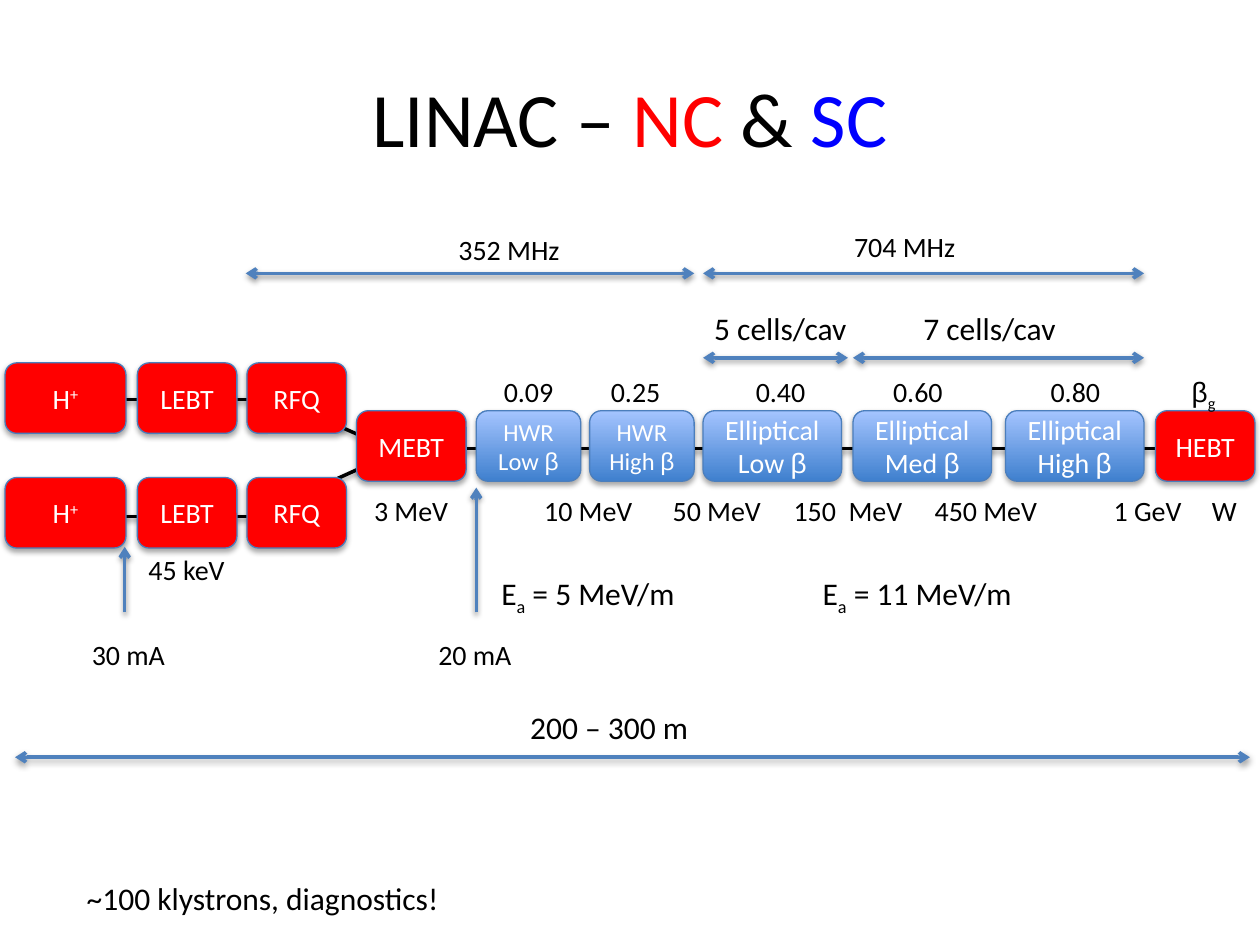
from collections import namedtuple
from lxml import etree
from pptx import Presentation
from pptx.dml.color import RGBColor
from pptx.enum.shapes import MSO_CONNECTOR, MSO_SHAPE
from pptx.enum.text import MSO_ANCHOR, MSO_AUTO_SIZE, PP_ALIGN
from pptx.oxml.ns import qn
from pptx.util import Inches, Pt

BLACK, WHITE, RED, BLUE = "000000", "FFFFFF", "FF0000", "0000FF"
ARROW, EDGE = "4F81BD", "4B7EBC"
GRADIENT = ["3F80CE", "A4C4FF"]
LABEL_HEIGHT = {16: 0.37, 18: 0.4}

Box = namedtuple("Box", "left top width height")
Span = namedtuple("Span", "text font color baseline", defaults=(None, None, None))
BETA = Span("β", "Arial")


def color(value):
    return RGBColor.from_string(value)


def place(box, x, y, width, height):
    return [Inches(n) for n in (box.left + x, box.top + y, width, height)]


def add_shadow(item, opacity, distance):
    properties = item._element.spPr
    effects = etree.SubElement(properties, qn("a:effectLst"))
    shadow = etree.SubElement(effects, qn("a:outerShdw"), blurRad="40000",
                              dist=str(distance), dir="5400000", rotWithShape="0")
    tint = etree.SubElement(shadow, qn("a:srgbClr"), val=BLACK)
    etree.SubElement(tint, qn("a:alpha"), val=str(opacity * 1000))


def write(frame, lines, size, ink, align=PP_ALIGN.LEFT):
    for index, line in enumerate(lines):
        para = frame.add_paragraph() if index else frame.paragraphs[0]
        para.alignment = align
        para.font.size = Pt(size)
        para.font.name = "Calibri"
        para.font.color.rgb = color(ink)
        for part in line:
            span = para.add_run()
            span.text = part.text
            if part.font:
                span.font.name = part.font
            if part.color:
                span.font.color.rgb = color(part.color)
            if part.baseline:
                span._r.get_or_add_rPr().set("baseline", str(part.baseline * 1000))


def add_label(page, box, x, y, width, text, size=16):
    spans = [Span(text)] if isinstance(text, str) else text
    label = page.shapes.add_textbox(*place(box, x, y, width, LABEL_HEIGHT[size]))
    label.text_frame.word_wrap = False
    label.text_frame.auto_size = MSO_AUTO_SIZE.SHAPE_TO_FIT_TEXT
    write(label.text_frame, [spans], size, BLACK)


def add_line(page, box, start, end, ink=ARROW, arrows=("headEnd", "tailEnd")):
    x1, y1, x2, y2 = place(box, *start, 0, 0)[:2] + place(box, *end, 0, 0)[:2]
    line = page.shapes.add_connector(MSO_CONNECTOR.STRAIGHT, x1, y1, x2, y2)
    line.line.color.rgb = color(ink)
    line.line.width = Pt(2)
    for arrow in arrows:
        etree.SubElement(line.line._get_or_add_ln(), qn("a:" + arrow), type="arrow")
    add_shadow(line, 38, 20000)


def add_section(page, box, x, width, lines, size=16, cold=False):
    section = page.shapes.add_shape(MSO_SHAPE.ROUNDED_RECTANGLE,
                                    *place(box, x, 0, width, box.height))
    if cold:
        section.fill.gradient()
        section.fill.gradient_angle = 90
        for stop, position, tint in zip(section.fill.gradient_stops, (0, 1), GRADIENT):
            stop.position = position
            stop.color.rgb = color(tint)
    else:
        section.fill.solid()
        section.fill.fore_color.rgb = color(RED)
    section.line.color.rgb = color(EDGE)
    section.line.width = Pt(0.75)
    add_shadow(section, 35, 23000)
    section.text_frame.word_wrap = True
    section.text_frame.vertical_anchor = MSO_ANCHOR.MIDDLE
    write(section.text_frame, lines, size, WHITE, PP_ALIGN.CENTER)


def add_title(page, box):
    title = page.shapes.add_textbox(*place(box, 0, 0, box.width, box.height))
    title.text_frame.word_wrap = True
    title.text_frame.vertical_anchor = MSO_ANCHOR.MIDDLE
    spans = [Span("LINAC – "), Span("NC", color=RED), Span(" & "), Span("SC", color=BLUE)]
    write(title.text_frame, [spans], 44, BLACK, PP_ALIGN.CENTER)


def add_beam_lines(page, box):
    for start, end in [((0.46, 1.22), (2.33, 1.22)), ((0.57, 0.29), (2.44, 0.29)),
                       ((2.17, 0.29), (3.12, 0.71)), ((2.17, 1.13), (3.12, 0.7)),
                       ((3.13, 0.68), (9.43, 0.68))]:
        add_line(page, box, start, end, BLACK, ())


def add_source(page, box):
    proton = [Span("H"), Span("+", baseline=30)]
    add_section(page, box, 0, 0.96, [proton])
    for x, name in [(1.05, "LEBT"), (1.92, "RFQ")]:
        add_section(page, box, x, 0.79, [[Span(name)]])


def add_accelerator(page, box):
    add_section(page, box, 0, 0.87, [[Span("MEBT")]])
    add_section(page, box, 6.34, 0.79, [[Span("HEBT")]])
    for x, width, kind, level, size in [
            (0.95, 0.83, "HWR", "Low ", 14), (1.85, 0.83, "HWR", "High ", 14),
            (2.75, 1.1, "Elliptical", "Low ", 16), (3.94, 1.1, "Elliptical", "Med ", 16),
            (5.15, 1.1, "Elliptical", "High ", 16)]:
        add_section(page, box, x, width, [[Span(kind)], [Span(level), BETA]], size, True)
    for x, beta in [(1.07, "0.09"), (1.92, "0.25"), (3.07, "0.40"),
                    (4.16, "0.60"), (5.41, "0.80")]:
        add_label(page, box, x, -0.34, 0.6, beta)
    add_label(page, box, 6.53, -0.34, 0.4, [BETA, Span("g", baseline=-25)])
    for x, width, energy in [
            (0.04, 0.81, "3 MeV"), (1.39, 0.92, "10 MeV"), (2.41, 0.92, "50 MeV"),
            (3.37, 1.09, "150  MeV"), (4.49, 1.04, "450 MeV"),
            (5.91, 0.76, "1 GeV"), (6.69, 0.4, "W")]:
        add_label(page, box, x, 0.61, width, energy)


def add_spans(page, box):
    for start, end, y in [(0, 3.56, 0.4), (3.63, 7.13, 0.4),
                          (3.63, 4.78, 1.07), (4.82, 7.13, 1.07)]:
        add_line(page, box, (start, y), (end, y))
    add_label(page, box, 1.59, 0.03, 1.02, "352 MHz")
    add_label(page, box, 4.73, 0, 1.02, "704 MHz")
    add_label(page, box, 3.62, 0.63, 1.27, "5 cells/cav", 18)
    add_label(page, box, 5.28, 0.63, 1.27, "7 cells/cav", 18)


def add_currents(page, box):
    for x, tip, label_x, current in [(0.36, 0.47, 0, "30 mA"), (3.15, 0, 2.75, "20 mA")]:
        add_line(page, box, (x, 0.99), (x, tip), arrows=("tailEnd",))
        add_label(page, box, label_x, 1.14, 0.79, current)
    add_label(page, box, 0.45, 0.47, 0.83, "45 keV")
    for x, width, value in [(3.25, 1.61, "5"), (5.8, 1.78, "11")]:
        field = [Span("E"), Span("a", baseline=-25), Span(f" = {value} MeV/m")]
        add_label(page, box, x, 0.64, width, field, 18)


def add_summary(page, box):
    add_label(page, box, 3.99, 0, 1.47, "200 – 300 m", 18)
    add_line(page, box, (0, 0.44), (box.width, 0.44))
    add_label(page, box, 0.47, 1.36, 3.03, "~100 klystrons, diagnostics!", 18)


def main():
    deck = Presentation()
    deck.slide_width, deck.slide_height = Inches(10), Inches(7.5)
    page = deck.slides.add_slide(deck.slide_layouts[6])
    add_title(page, Box(0.5, 0.3, 9, 1.25))
    add_beam_lines(page, Box(0.04, 2.88, 9.43, 1.47))
    for top in (2.88, 3.79):
        add_source(page, Box(0.04, top, 2.71, 0.56))
    add_accelerator(page, Box(2.83, 3.26, 7.13, 0.56))
    add_spans(page, Box(1.95, 1.77, 7.13, 1.07))
    add_currents(page, Box(0.63, 3.87, 7.58, 1.51))
    add_summary(page, Box(0.12, 5.57, 9.8, 1.76))
    deck.save("out.pptx")


if __name__ == "__main__":
    main()
